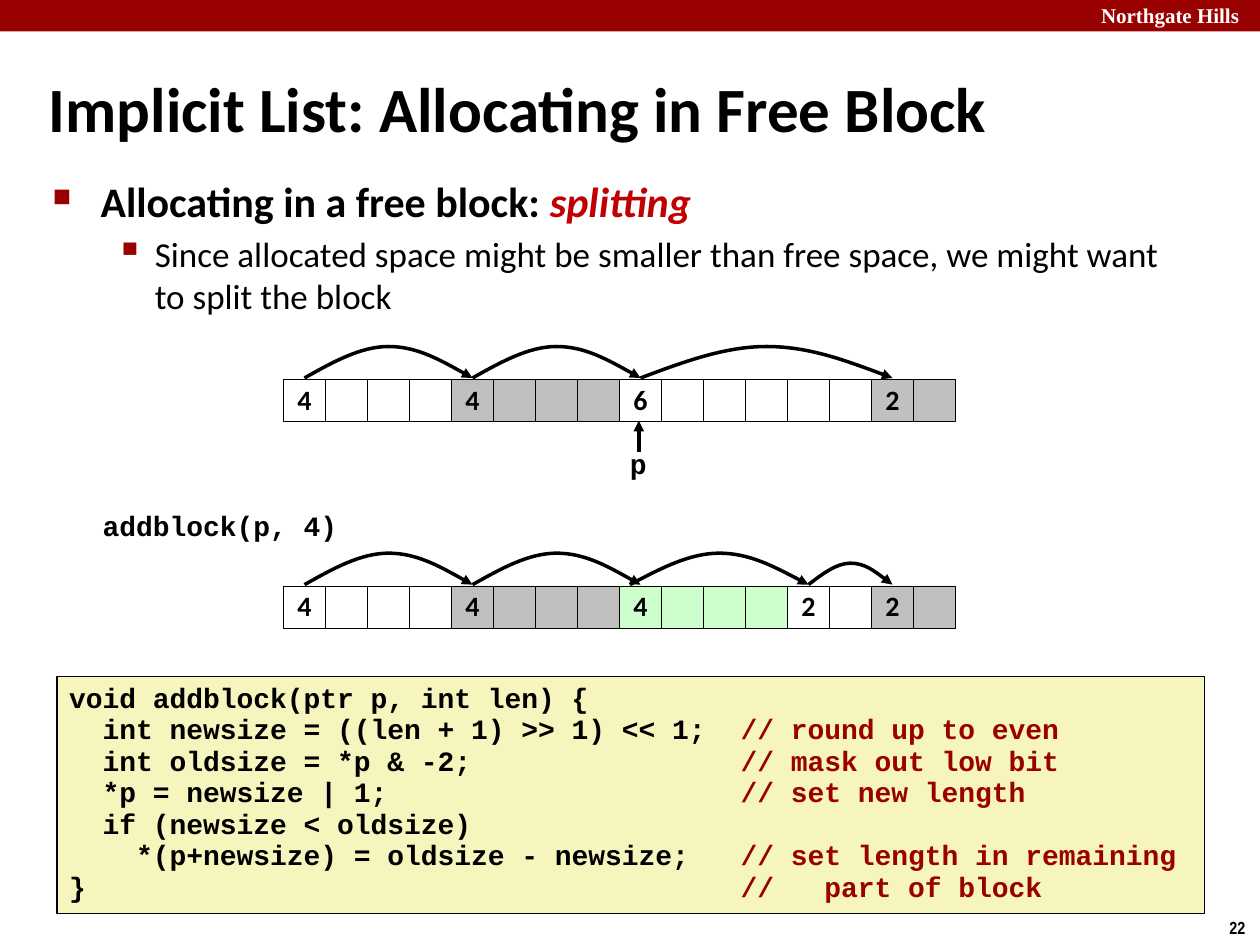
from lxml.etree import SubElement
from pptx import Presentation
from pptx.dml.color import RGBColor
from pptx.enum.shapes import MSO_CONNECTOR, MSO_SHAPE
from pptx.enum.text import MSO_ANCHOR, PP_ALIGN
from pptx.oxml.ns import qn
from pptx.util import Inches, Pt

COLORS = {
    "black": "000000", "white": "FFFFFF", "red": "990000", "accent": "C00000",
    "used": "BFBFBF", "tail": "C0C0C0", "new": "CCFFCC", "code": "F6F5BD",
}
CELL = 1 / 3
ROW_LEFT = 2.25
CODE = [
    ("void addblock(ptr p, int len) {", ""),
    ("  int newsize = ((len + 1) >> 1) << 1;", "// round up to even"),
    ("  int oldsize = *p & -2;", "// mask out low bit"),
    ("  *p = newsize | 1;", "// set new length"),
    ("  if (newsize < oldsize)", ""),
    ("    *(p+newsize) = oldsize - newsize;", "// set length in remaining"),
    ("}", "//   part of block"),
]


def color(name):
    """Return the named colour."""
    return RGBColor.from_string(COLORS[name])


def write(para, text, size=16, font="Calibri", ink="black", bold=True, italic=False):
    """Add a formatted span of text to a paragraph."""
    span = para.add_run()
    span.text = text
    span.font.size = Pt(size)
    span.font.name = font
    span.font.bold = bold
    span.font.italic = italic
    span.font.color.rgb = color(ink)


class SlideBuilder:
    """Hold the style and the current slide."""

    code_font = "Courier New"
    arrow_width = 2
    grid_width = 0.25

    def __init__(self, page):
        """Keep the page to draw on."""
        self.page = page

    def text(self, left, top, width, height, wrap=True, inset=0.1, spacing=1.0):
        """Add a text box and return its first paragraph and frame."""
        box = self.page.shapes.add_textbox(
            Inches(left), Inches(top), Inches(width), Inches(height))
        frame = box.text_frame
        frame.word_wrap = wrap
        frame.margin_left = frame.margin_right = Inches(inset)
        para = frame.paragraphs[0]
        para.line_spacing = spacing
        return para, frame

    def rectangle(self, left, top, width, height, fill, line=None):
        """Add a filled rectangle, outlined when a line width is given."""
        box = self.page.shapes.add_shape(
            MSO_SHAPE.RECTANGLE, Inches(left), Inches(top), Inches(width), Inches(height))
        box.shadow.inherit = False
        box.fill.solid()
        box.fill.fore_color.rgb = color(fill)
        if line:
            box.line.color.rgb = color("black")
            box.line.width = Pt(line)
        else:
            box.line.fill.background()
        return box

    def bullet(self, para, sign, percent, margin, hang, before):
        """Give a paragraph a red bullet with a hanging indent."""
        para.space_before = Pt(before)
        properties = para._p.get_or_add_pPr()
        properties.set("marL", str(Inches(margin)))
        properties.set("indent", str(-Inches(hang)))
        ink = SubElement(properties, qn("a:buClr"))
        SubElement(ink, qn("a:srgbClr"), val=COLORS["red"])
        SubElement(properties, qn("a:buSzPct"), val=str(percent * 1000))
        SubElement(properties, qn("a:buChar"), char=sign)

    def arrowhead(self, shape):
        """Draw a shape's line in black with a triangle at its end."""
        shape.line.color.rgb = color("black")
        shape.line.width = Pt(self.arrow_width)
        SubElement(shape.element.spPr.find(qn("a:ln")), qn("a:tailEnd"), type="triangle")

    def arrow(self, start, end):
        """Add a straight arrow."""
        line = self.page.shapes.add_connector(
            MSO_CONNECTOR.STRAIGHT, *map(Inches, start + end))
        self.arrowhead(line)
        SubElement(line.element.spPr, qn("a:effectLst"))

    def arc(self, start, end, base):
        """Add a curved arrow between two cells, counted from the left."""
        left, right = (ROW_LEFT + (index + 0.5) * CELL for index in (start, end))
        rise = 0.25 if end - start > 2 else 0.17
        heights = (0, 0.5, 1, 1, 1, 0.5, 0)
        points = [
            (Inches(left + (right - left) * step / 6), Inches(base - rise * height))
            for step, height in enumerate(heights)
        ]
        builder = self.page.shapes.build_freeform(*points[0])
        builder.add_line_segments(points[1:], close=False)
        curve = builder.convert_to_shape()
        curve.shadow.inherit = False
        curve.fill.background()
        outline = next(curve.element.iter(qn("a:path")))
        segments = outline.findall(qn("a:lnTo"))
        for first in (0, 3):
            bezier = SubElement(outline, qn("a:cubicBezTo"))
            for segment in segments[first:first + 3]:
                bezier.append(segment[0])
                outline.remove(segment)
        self.arrowhead(curve)

    def heap(self, top, blocks, arcs):
        """Add a row of memory blocks and the arcs that link them."""
        index = 0
        for label, size, fill in blocks:
            for offset in range(size):
                box = self.rectangle(
                    ROW_LEFT + index * CELL, top, CELL, CELL, fill, self.grid_width)
                index += 1
                if offset == 0:
                    frame = box.text_frame
                    frame.word_wrap = False
                    frame.vertical_anchor = MSO_ANCHOR.MIDDLE
                    para = frame.paragraphs[0]
                    para.alignment = PP_ALIGN.CENTER
                    para.line_spacing = 0.98
                    write(para, label)
        for start, end in arcs:
            self.arc(start, end, top - 0.01)

    def listing(self, left, top, width, height, lines):
        """Add a code panel with comments aligned at a tab stop."""
        box = self.rectangle(left, top, width, height, "code", 1)
        frame = box.text_frame
        frame.word_wrap = True
        frame.vertical_anchor = MSO_ANCHOR.TOP
        for number, (code, comment) in enumerate(lines):
            para = frame.add_paragraph() if number else frame.paragraphs[0]
            para.alignment = PP_ALIGN.LEFT
            para.line_spacing = 0.94
            write(para, code, font=self.code_font)
            if comment:
                stops = SubElement(para._p.get_or_add_pPr(), qn("a:tabLst"))
                SubElement(stops, qn("a:tab"), pos=str(Inches(5.33)), algn="l")
                write(para, "\t" + comment, font=self.code_font, ink="red")


def main():
    """Build and save the deck."""
    deck = Presentation()
    deck.slide_width, deck.slide_height = Inches(10), Inches(7.5)
    slide = SlideBuilder(deck.slides.add_slide(deck.slide_layouts[6]))

    slide.rectangle(0, 0, 10, 0.25, "red")
    para, frame = slide.text(8.64, -0.03, 1.43, 0.3)
    write(para, "Northgate Hills", size=12, font="Times New Roman", ink="white")
    para, frame = slide.text(9.66, 7.23, 0.34, 0.27, wrap=False)
    write(para, "22", size=10, font="Arial Narrow")

    para, frame = slide.text(0.29, 0.54, 9.42, 0.63)
    frame.vertical_anchor = MSO_ANCHOR.MIDDLE
    write(para, "Implicit List: Allocating in Free Block", size=36)

    para, frame = slide.text(0.32, 1.34, 9.09, 5.71)
    slide.bullet(para, "■", 60, 0.38, 0.38, 4.8)
    write(para, "Allocating in a free block: ", size=24)
    write(para, "splitting", size=24, ink="accent", italic=True)
    para = frame.add_paragraph()
    para.level = 1
    slide.bullet(para, "▪", 110, 0.81, 0.31, 4)
    write(para, "Since allocated space might be smaller than free space, "
          "we might want to split the block", size=20, bold=False)

    slide.listing(0.45, 5.37, 9.11, 1.88, CODE)
    shared = [("4", 4, "white"), ("4", 4, "used")]
    last = ("2", 2, "tail")
    slide.heap(3.01, shared + [("6", 6, "white"), last], [(0, 4), (4, 8), (8, 14)])
    slide.heap(4.65, shared + [("4", 4, "new"), ("2", 2, "white"), last],
               [(0, 4), (4, 8), (7.75, 12), (12, 14)])

    slide.arrow((5.07, 3.59), (5.07, 3.34))
    para, frame = slide.text(4.9, 3.51, 0.32, 0.37, wrap=False, spacing=0.98)
    write(para, "p", font=slide.code_font)
    para, frame = slide.text(0.75, 4.03, 1.99, 0.33, wrap=False, inset=0.05, spacing=0.85)
    para.alignment = PP_ALIGN.CENTER
    write(para, "addblock(p, 4)", font=slide.code_font)

    deck.save("out.pptx")


if __name__ == "__main__":
    main()
